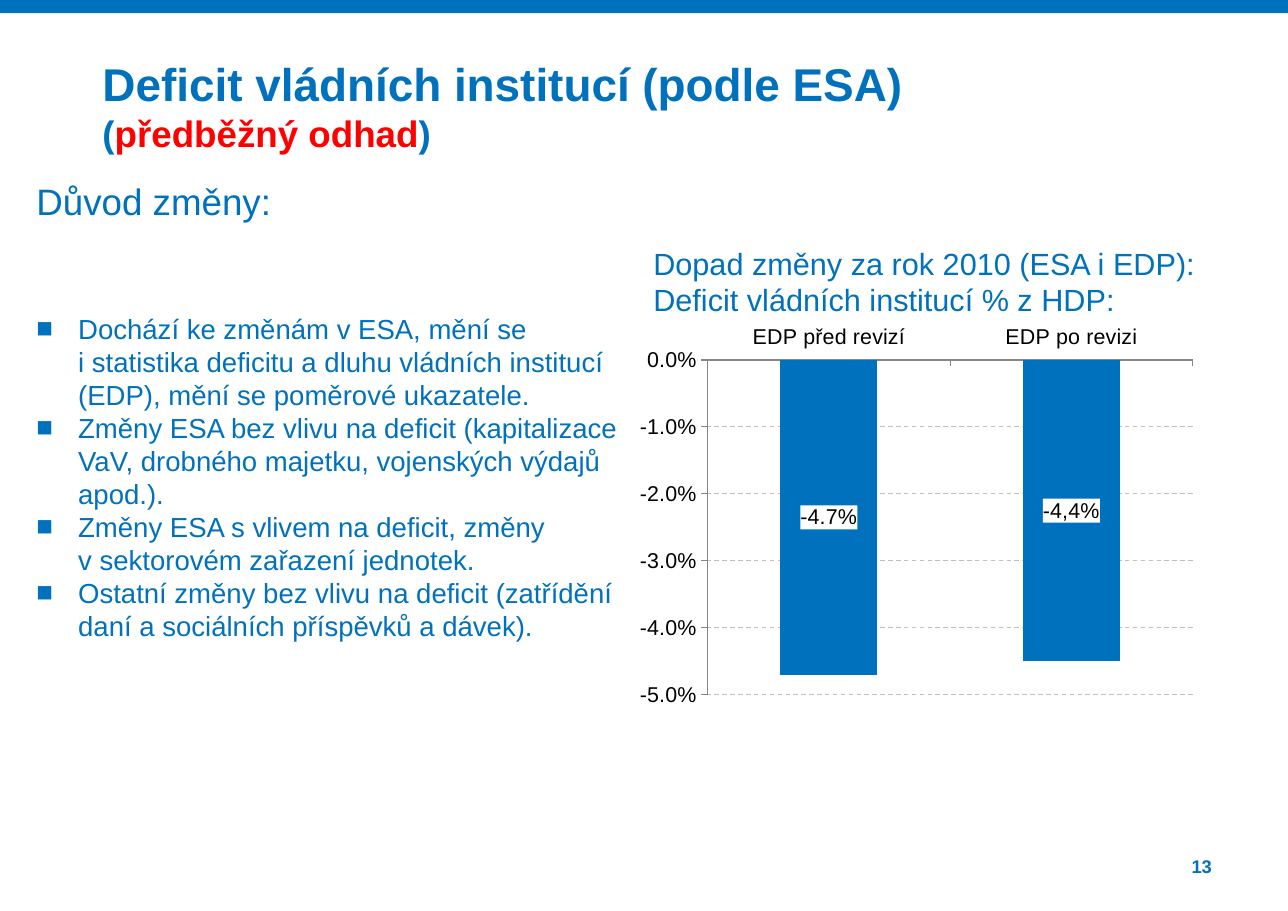
"""Build the slide on the government deficit before and after the revision."""
from lxml import etree
from pptx import Presentation
from pptx.chart.data import CategoryChartData
from pptx.dml.color import RGBColor
from pptx.enum import chart as charts, dml, shapes, text
from pptx.oxml import parse_xml
from pptx.oxml.ns import nsdecls, qn
from pptx.util import Inches, Pt

BLUE = "0071BC"


def color(value):
    return RGBColor.from_string(value)


def style(paragraph, size, spacing, bold=False):
    paragraph.line_spacing = Pt(spacing)
    paragraph.space_before = paragraph.space_after = Pt(0)
    paragraph.font.name = "Arial"
    paragraph.font.size = Pt(size)
    paragraph.font.bold = bold
    paragraph.font.color.rgb = color(BLUE)


presentation = Presentation()
presentation.slide_width = Inches(11.69)
presentation.slide_height = Inches(8.27)
slide = presentation.slides.add_slide(presentation.slide_layouts[5])

band = slide.shapes.add_shape(shapes.MSO_SHAPE.RECTANGLE, 0, 0, presentation.slide_width, Inches(0.12))
band.shadow.inherit = False
band.fill.solid()
band.fill.fore_color.rgb = color(BLUE)
band.line.fill.background()

title = slide.shapes.title
title.left, title.top, title.width, title.height = Inches(0.93), Inches(0.49), Inches(10.08), Inches(1.06)
reasons = slide.shapes.add_textbox(Inches(0.33), Inches(1.55), Inches(5.36), Inches(5.49))
impact = slide.shapes.add_textbox(Inches(5.93), Inches(2.17), Inches(5.2), Inches(0.71))
number = slide.shapes.add_textbox(Inches(10.22), Inches(7.76), Inches(0.78), Inches(0.21))
for shape in (title, reasons, impact, number):
    frame = shape.text_frame
    frame.word_wrap = True
    frame.auto_size = text.MSO_AUTO_SIZE.NONE
    frame.vertical_anchor = text.MSO_ANCHOR.TOP
    frame.margin_left = frame.margin_right = 0
    frame.margin_top = frame.margin_bottom = Inches(0.05) if shape is impact else 0

title.text_frame.text = "Deficit vládních institucí (podle ESA)"
heading = title.text_frame.paragraphs[0]
subtitle = title.text_frame.add_paragraph()
for part in ("(", "předběžný odhad", ")"):
    subtitle.add_run().text = part
style(heading, 30, 37, True)
style(subtitle, 24, 28.8, True)
subtitle.runs[1].font.color.rgb = color("FF0000")
for paragraph in (heading, subtitle):
    paragraph.alignment = text.PP_ALIGN.LEFT

reasons.text_frame.text = "Důvod změny:"
style(reasons.text_frame.paragraphs[0], 24, 34)
bullets = [
    "Dochází ke změnám v ESA, mění se\vi statistika deficitu a dluhu vládních institucí (EDP), mění se poměrové ukazatele.",
    "Změny ESA bez vlivu na deficit (kapitalizace VaV, drobného majetku, vojenských výdajů apod.).",
    "Změny ESA s vlivem na deficit, změny\vv sektorovém zařazení jednotek.",
    "Ostatní změny bez vlivu na deficit (zatřídění daní a sociálních příspěvků a dávek).",
]
for index, bullet in enumerate(bullets):
    paragraph = reasons.text_frame.add_paragraph()
    paragraph.text = bullet
    properties = paragraph._p.get_or_add_pPr()
    properties.set("marL", str(Inches(0.38)))
    properties.set("indent", str(-Inches(0.38)))
    etree.SubElement(properties, qn("a:buFont")).set("typeface", "Arial")
    etree.SubElement(properties, qn("a:buChar")).set("char", "■")
    style(paragraph, 18, 21.6)
    if index == 0:
        paragraph.space_before = Pt(58)

impact.text_frame.text = "Dopad změny za rok 2010 (ESA i EDP):\nDeficit vládních institucí % z HDP:"
for paragraph in impact.text_frame.paragraphs:
    style(paragraph, 20, 24)

number.text_frame.text = "13"
style(number.text_frame.paragraphs[0], 12, 14.4, True)
number.text_frame.paragraphs[0].alignment = text.PP_ALIGN.RIGHT

data = CategoryChartData(number_format="0.0%")
data.categories = ["EDP před revizí", "EDP po revizi"]
data.add_series("Deficit", (-0.047, -0.045))
chart = slide.shapes.add_chart(
    charts.XL_CHART_TYPE.COLUMN_STACKED, Inches(5.69), Inches(2.87), Inches(5.24), Inches(3.62), data
).chart
chart.has_legend = False
chart.has_title = False
chart.font.name = "Arial"
chart.font.size = Pt(14)
chart.font.color.rgb = color("000000")

for axis in (chart.category_axis, chart.value_axis):
    axis.major_tick_mark = charts.XL_TICK_MARK.OUTSIDE
    axis.minor_tick_mark = charts.XL_TICK_MARK.NONE
    axis.format.line.color.rgb = color("868686")
    axis.format.line.width = Pt(0.75)
chart.category_axis.tick_label_position = charts.XL_TICK_LABEL_POSITION.HIGH
value_axis = chart.value_axis
value_axis.minimum_scale, value_axis.maximum_scale, value_axis.major_unit = -0.05, 0, 0.01
value_axis.tick_labels.number_format = "0.0%"
value_axis.tick_labels.number_format_is_linked = False
grid = value_axis.major_gridlines.format.line
grid.color.rgb = color("BFBFBF")
grid.width = Pt(0.75)
grid.dash_style = dml.MSO_LINE.DASH

plot = chart.plots[0]
plot.gap_width = 150
plot.overlap = 100
plot.vary_by_categories = False
series = plot.series[0]
series.invert_if_negative = False
series.format.fill.solid()
series.format.fill.fore_color.rgb = color(BLUE)

labels = series.data_labels
labels.show_value = True
labels.number_format = "0.0%"
labels.number_format_is_linked = False
revised = series.points[1].data_label.text_frame
revised.text = "-4,4%"
revised_font = revised.paragraphs[0].runs[0].font
revised_font.name = "Arial"
revised_font.size = Pt(14)
revised_font.color.rgb = color("000000")
for element in (labels._element, labels._element.find(qn("c:dLbl"))):
    element.find(qn("c:showLegendKey")).addprevious(parse_xml(
        f'<c:spPr {nsdecls("c", "a")}><a:solidFill><a:srgbClr val="FFFFFF"/></a:solidFill></c:spPr>'))

plot_area = chart._chartSpace.chart.plotArea
for layout in plot_area.findall(qn("c:layout")):
    plot_area.remove(layout)
layout = etree.Element(qn("c:layout"))
manual = etree.SubElement(layout, qn("c:manualLayout"))
for name, value in (("layoutTarget", "inner"), ("xMode", "edge"), ("yMode", "edge"),
                    ("x", "0.14"), ("y", "0.11"), ("w", "0.84"), ("h", "0.84")):
    etree.SubElement(manual, qn(f"c:{name}")).set("val", value)
plot_area.insert(0, layout)

presentation.save("out.pptx")
